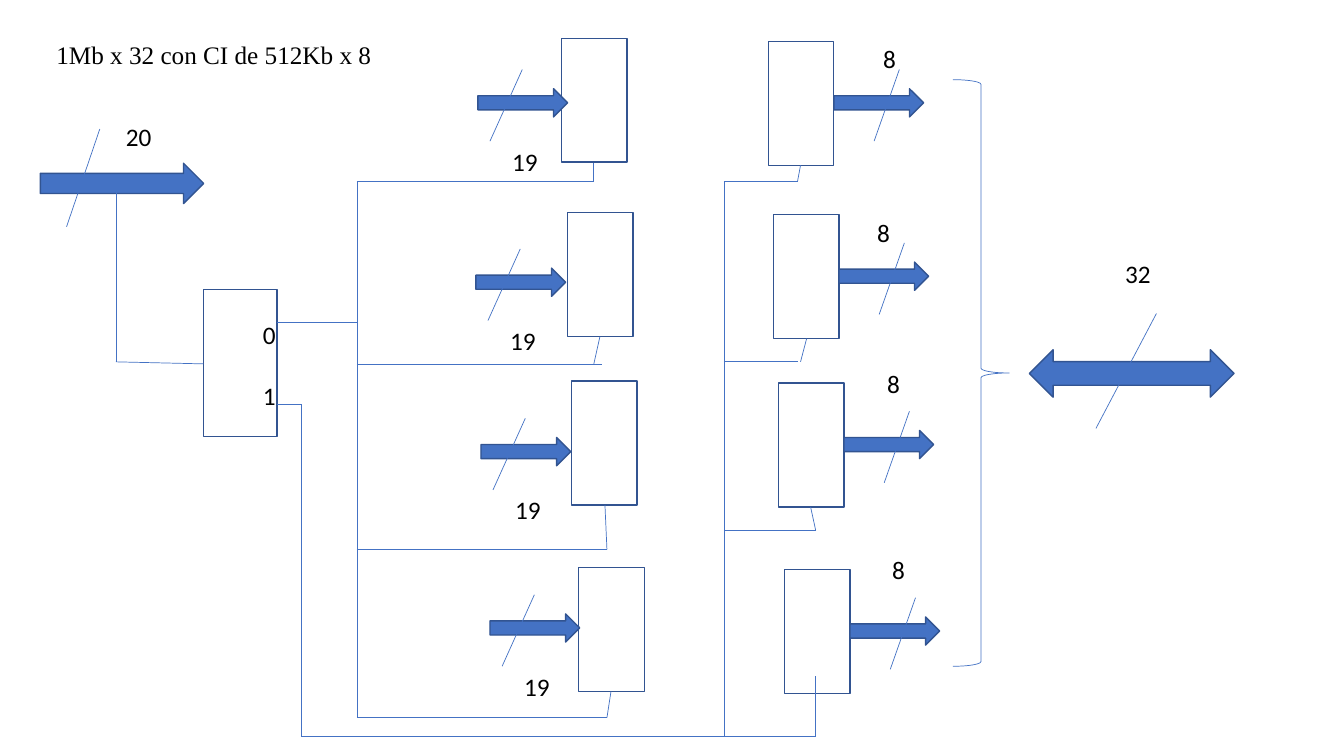
"""Builds a memory expansion diagram: 1Mb x 32 from 512Kb x 8 chips."""
from itertools import pairwise

from lxml import etree
from pptx import Presentation
from pptx.dml.color import RGBColor
from pptx.enum.shapes import MSO_CONNECTOR, MSO_SHAPE
from pptx.enum.text import MSO_AUTO_SIZE, PP_ALIGN
from pptx.oxml.ns import qn
from pptx.util import Inches, Pt

RECTANGLE = MSO_SHAPE.RECTANGLE
RIGHT_ARROW = MSO_SHAPE.RIGHT_ARROW
DOUBLE_ARROW = MSO_SHAPE.LEFT_RIGHT_ARROW
RIGHT_BRACE = MSO_SHAPE.RIGHT_BRACE
STRAIGHT = MSO_CONNECTOR.STRAIGHT
FIT_SHAPE = MSO_AUTO_SIZE.SHAPE_TO_FIT_TEXT
JUSTIFY = PP_ALIGN.JUSTIFY

COLUMNS, ROWS = 13.33, 7.5
CELL = Inches(1)
BLUE, DARK_BLUE, BLACK = "4472C4", "325491", "000000"
CHIP_WIDTH, CHIP_HEIGHT = 0.65, 1.23
BUS_WIDTH, BUS_HEIGHT = 0.89, 0.28
LABEL_HEIGHT = 0.4

ADDRESS_CHIPS = [(5.57, 0.38), (5.63, 2.11), (5.67, 3.78), (5.74, 5.63)]
ADDRESS_BUSES = [(4.74, 0.88), (4.72, 2.66), (4.77, 4.34), (4.86, 6.09)]
DATA_CHIPS = [(7.62, 0.41), (7.67, 2.13), (7.72, 3.8), (7.78, 5.65)]
DATA_LABELS = [(8.66, 0.38), (8.6, 2.11), (8.7, 3.61), (8.75, 5.45)]

WIRES = [
    [(1.15, 1.8), (1.15, 3.59), (2.02, 3.61)],
    [(2.75, 3.2), (3.54, 3.2), (3.54, 1.8), (5.89, 1.8), (5.89, 1.62)],
    [(3.54, 3.2), (3.54, 7.12), (6.02, 7.12), (6.06, 6.86)],
    [(3.54, 3.61), (5.97, 3.61)],
    [(5.89, 3.61), (5.95, 3.34)],
    [(3.54, 5.45), (6.02, 5.45), (6, 5.01)],
    [(2.75, 4.01), (2.99, 4.01), (2.99, 7.31), (8.09, 7.31), (8.09, 6.71)],
    [(7.18, 7.31), (7.18, 1.8), (7.91, 1.8), (7.94, 1.64)],
    [(7.18, 3.59), (7.91, 3.59)],
    [(7.94, 3.59), (8, 3.36)],
    [(7.18, 5.26), (8.09, 5.26), (8.04, 5.03)],
]


def grid(*cells):
    """Turn grid positions into slide lengths."""
    return [round(cell * CELL) for cell in cells]


def color(value):
    """Turn a hex string into a colour."""
    return RGBColor.from_string(value)


def add_outline(slide, kind, box, fill=None, line=DARK_BLUE, weight=1):
    """Draw a preset shape, hollow unless a fill is given."""
    shape = slide.shapes.add_shape(kind, *grid(*box))
    shape.shadow.inherit = False
    if fill:
        shape.fill.solid()
        shape.fill.fore_color.rgb = color(fill)
    else:
        shape.fill.background()
    shape.line.color.rgb = color(line)
    shape.line.width = Pt(weight)


def add_wire(slide, points):
    """Join successive points with thin straight lines."""
    for start, end in pairwise(points):
        connector = slide.shapes.add_connector(STRAIGHT, *grid(*start, *end))
        connector.line.color.rgb = color(BLUE)
        connector.line.width = Pt(0.5)
        properties = connector._element.find(qn("p:spPr"))
        etree.SubElement(properties, qn("a:effectLst"))


def add_label(slide, text, box, font="Calibri", gap=0):
    """Write text lines, with a gap in points between them."""
    shape = slide.shapes.add_textbox(*grid(*box))
    frame = shape.text_frame
    frame.word_wrap = True
    frame.auto_size = FIT_SHAPE
    frame.text = text
    for paragraph in frame.paragraphs:
        paragraph.font.size = Pt(18)
        paragraph.font.name = font
        paragraph.font.color.rgb = color(BLACK)
    for paragraph in frame.paragraphs[1:]:
        paragraph.space_before = Pt(gap)
    return frame


def add_title(slide, text):
    """Write the indented title."""
    frame = add_label(slide, text, (0, 0.19, 3.85, 0.5), "Times New Roman")
    paragraph = frame.paragraphs[0]
    paragraph.alignment = JUSTIFY
    paragraph.line_spacing = 1.5
    paragraph._p.get_or_add_pPr().set("marL", str(Inches(0.46)))


def add_chip(slide, left, top):
    """Draw one memory chip."""
    add_outline(slide, RECTANGLE, (left, top, CHIP_WIDTH, CHIP_HEIGHT))


def add_bus(slide, left, top, slash_top, slash_bottom):
    """Draw a bus arrow crossed by a slash."""
    add_outline(slide, RIGHT_ARROW, (left, top, BUS_WIDTH, BUS_HEIGHT), BLUE)
    add_wire(slide, [(left + slash_top, top - 0.19), (left + slash_bottom, top + 0.52)])


def add_address_side(slide):
    """Draw the left chips with their address buses."""
    for chip, (left, top) in zip(ADDRESS_CHIPS, ADDRESS_BUSES):
        add_chip(slide, *chip)
        add_bus(slide, left, top, 0.44, 0.12)
        add_label(slide, "19", (left + 0.24, top + 0.52, 0.59, LABEL_HEIGHT))


def add_data_side(slide):
    """Draw the right chips with their data buses."""
    for (left, top), label in zip(DATA_CHIPS, DATA_LABELS):
        add_chip(slide, left, top)
        add_bus(slide, left + CHIP_WIDTH, top + 0.47, 0.65, 0.4)
        add_label(slide, "8", (*label, 0.49, LABEL_HEIGHT))


def add_decoder(slide):
    """Draw the address input and the decoder with its two outputs."""
    add_outline(slide, RECTANGLE, (2.02, 2.87, 0.73, 1.46))
    add_outline(slide, RIGHT_ARROW, (0.4, 1.62, 1.62, 0.4), BLUE)
    add_wire(slide, [(0.99, 1.28), (0.66, 2.25)])
    add_label(slide, "20", (1.15, 1.15, 0.59, LABEL_HEIGHT))
    frame = add_label(slide, "0\n1", (2.51, 3.12, 0.18, 1.01), gap=22)
    frame.margin_right = 0


def add_output(slide):
    """Draw the brace and the combined data bus."""
    add_outline(slide, RIGHT_BRACE, (9.45, 0.79, 0.56, 5.82), line=BLUE, weight=0.5)
    add_outline(slide, DOUBLE_ARROW, (10.21, 3.47, 2.03, 0.47), BLUE)
    add_wire(slide, [(11.47, 3.11), (10.87, 4.25)])
    add_label(slide, "32", (11.06, 2.51, 0.75, LABEL_HEIGHT))


def main():
    """Build and save the slide."""
    presentation = Presentation()
    presentation.slide_width, presentation.slide_height = grid(COLUMNS, ROWS)
    slide = presentation.slides.add_slide(presentation.slide_layouts[6])
    add_title(slide, "1Mb x 32 con CI de 512Kb x 8")
    add_address_side(slide)
    add_data_side(slide)
    add_decoder(slide)
    add_output(slide)
    for wire in WIRES:
        add_wire(slide, wire)
    presentation.save("out.pptx")


if __name__ == "__main__":
    main()
